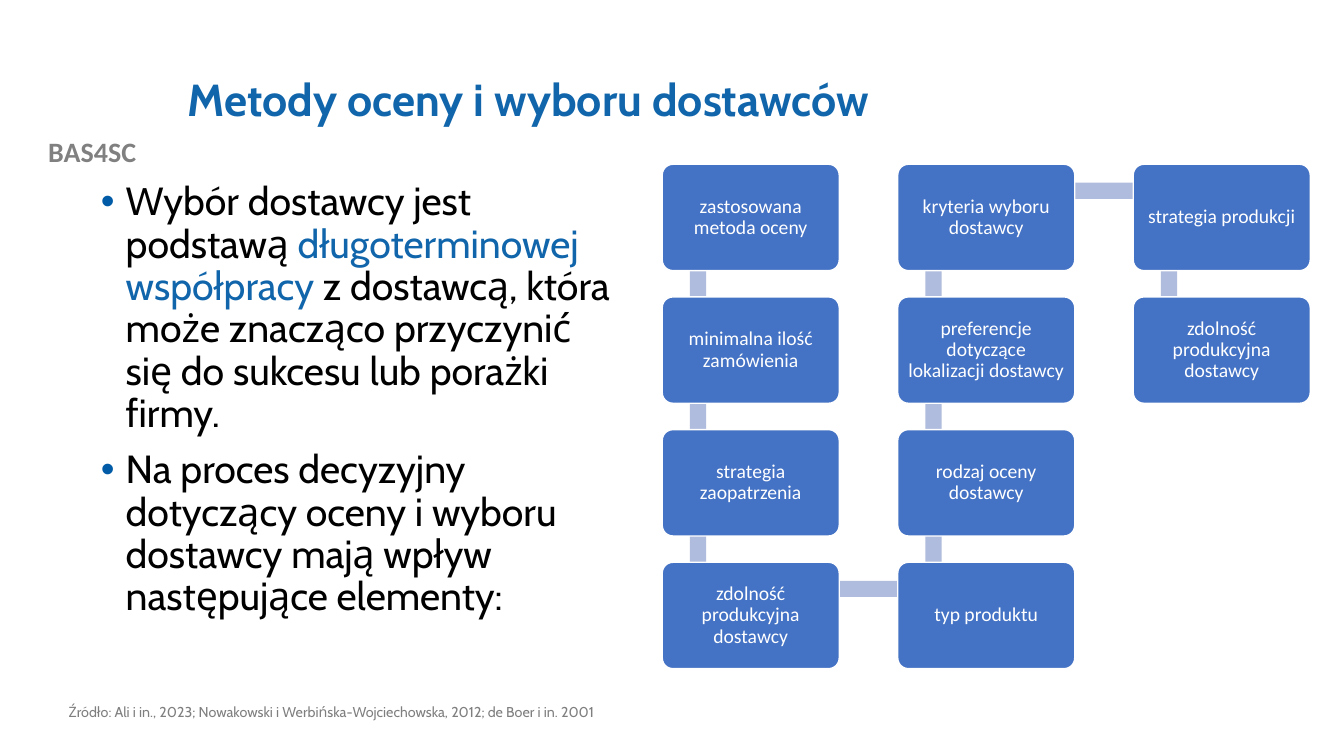
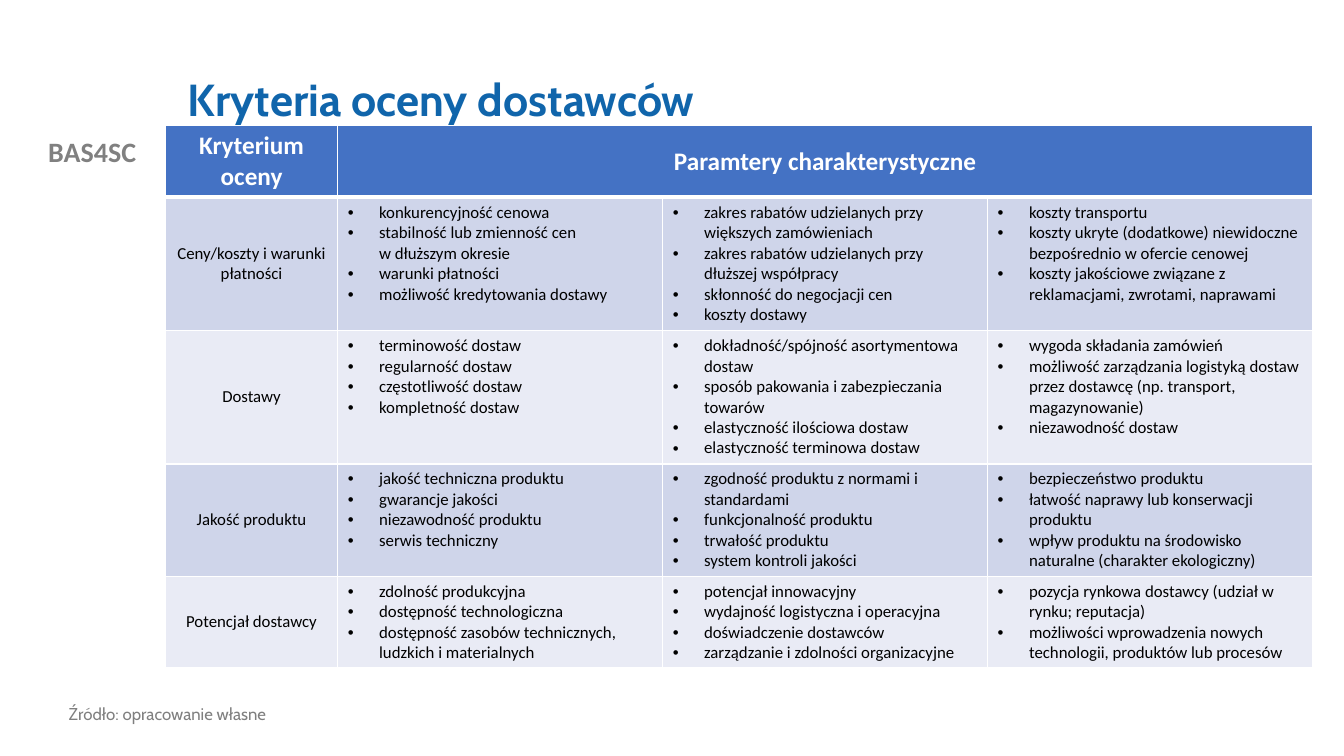
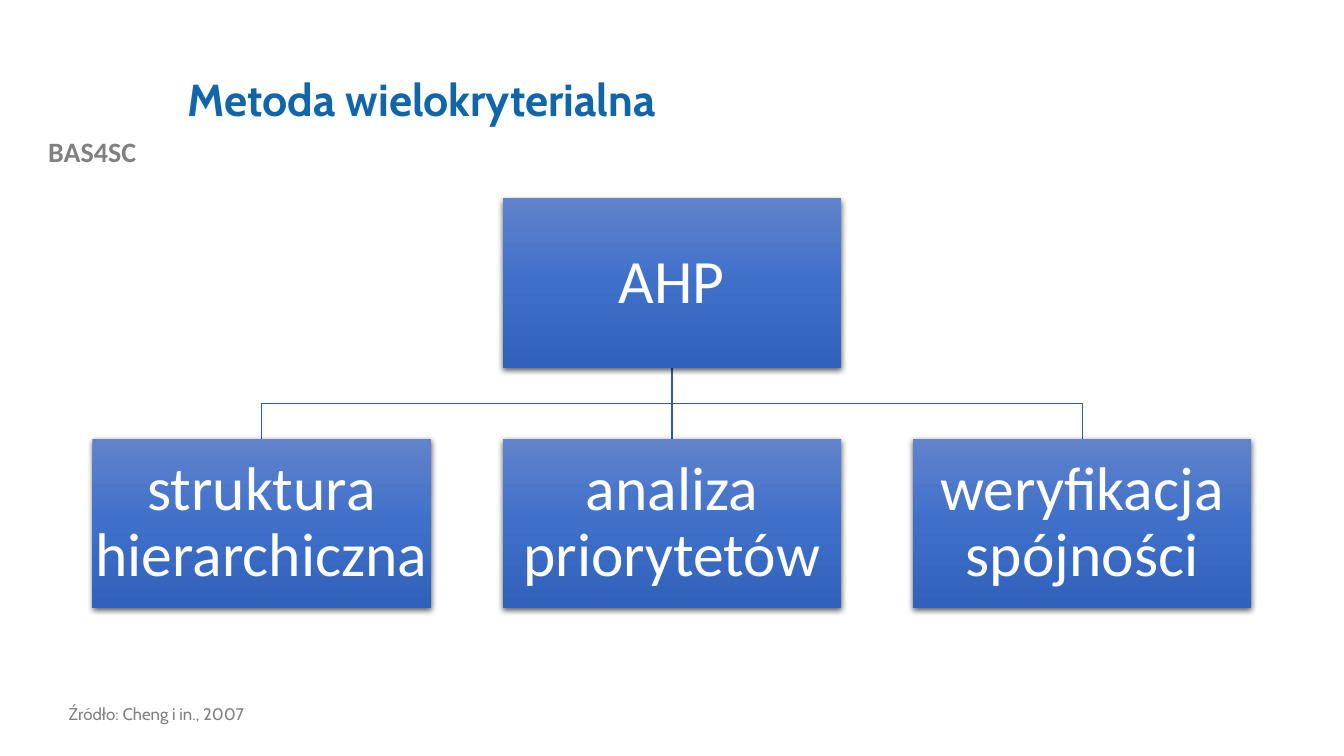
from copy import deepcopy
from dataclasses import dataclass

from lxml import etree
from pptx import Presentation
from pptx.dml.color import RGBColor
from pptx.enum.shapes import MSO_CONNECTOR, MSO_SHAPE
from pptx.enum.text import MSO_ANCHOR, MSO_AUTO_SIZE, PP_ALIGN
from pptx.oxml.ns import qn
from pptx.util import Cm, Pt

LEFT, CENTER = PP_ALIGN.LEFT, PP_ALIGN.CENTER
MIDDLE, TOP = MSO_ANCHOR.MIDDLE, MSO_ANCHOR.TOP
RECT, ROUNDED = MSO_SHAPE.RECTANGLE, MSO_SHAPE.ROUNDED_RECTANGLE
STRAIGHT = MSO_CONNECTOR.STRAIGHT
NO_AUTOFIT = MSO_AUTO_SIZE.NONE
TITLE_ONLY = 5


@dataclass(frozen=True)
class Theme:
    heading_font: str = "Cabin"
    label_font: str = "Calibri"
    accent: str = "1065AB"
    bullet: str = "015BA6"
    ink: str = "000000"
    paper: str = "FFFFFF"
    tag: str = "808080"
    source: str = "7F7F7F"
    block: str = "4472C4"
    link: str = "B0BCDE"
    branch: str = "365B9D"
    bands: tuple = ("CFD5EA", "E9EBF5")
    gradient: tuple = ((0, "6183CB"), (0.5, "3E70CA"), (1, "3062BB"))
    title_size: float = 32
    tag_size: float = 20
    body_size: float = 28
    source_size: float = 12
    long_source_size: float = 10.2
    step_size: float = 14
    header_size: float = 18
    cell_size: float = 12
    node_size: float = 44


@dataclass(frozen=True)
class Box:
    """A region of the slide in centimetres."""
    left: float
    top: float
    width: float
    height: float

    def lengths(self):
        return Cm(self.left), Cm(self.top), Cm(self.width), Cm(self.height)


THEME = Theme()
TITLE_BOX = Box(4.47, 1.02, 27.08, 3.1)
TAG_BOX = Box(0, 3.27, 4.65, 1.12)
SOURCE_BOX = Box(1.48, 17.67, 14.99, 0.89)
BODY_BOX = Box(2.29, 4.46, 13.39, 12.09)
CHAIN_BOX = Box(16.69, 4.14, 16.33, 12.71)
TABLE_BOX = Box(4.17, 3.17, 28.91, 13.65)
TREE_BOX = Box(2.33, 5, 29.21, 10.33)

INTRO = [
    [("Wybór dostawcy jest podstawą ", THEME.ink),
     ("długoterminowej współpracy ", THEME.accent),
     ("z dostawcą, która może znacząco przyczynić się do sukcesu lub porażki firmy.", THEME.ink)],
    [("Na proces decyzyjny dotyczący oceny i wyboru dostawcy mają wpływ "
      "następujące elementy:", THEME.ink)],
]
DECISION_STEPS = [
    "zastosowana metoda oceny", "minimalna ilość zamówienia",
    "strategia zaopatrzenia", "zdolność produkcyjna dostawcy",
    "typ produktu", "rodzaj oceny dostawcy",
    "preferencje dotyczące lokalizacji dostawcy", "kryteria wyboru dostawcy",
    "strategia produkcji", "zdolność produkcyjna dostawcy",
]
CRITERIA_HEADER = ("Kryterium oceny", "Paramtery charakterystyczne")
CRITERIA = [
    ("Ceny/koszty i warunki płatności",
     ["konkurencyjność cenowa", "stabilność lub zmienność cen \nw dłuższym okresie",
      "warunki płatności", "możliwość kredytowania dostawy"],
     ["zakres rabatów udzielanych przy większych zamówieniach",
      "zakres rabatów udzielanych przy dłuższej współpracy",
      "skłonność do negocjacji cen", "koszty dostawy"],
     ["koszty transportu",
      "koszty ukryte (dodatkowe) niewidoczne bezpośrednio w ofercie cenowej",
      "koszty jakościowe związane z reklamacjami, zwrotami, naprawami"]),
    ("Dostawy",
     ["terminowość dostaw", "regularność dostaw", "częstotliwość dostaw",
      "kompletność dostaw"],
     ["dokładność/spójność asortymentowa dostaw",
      "sposób pakowania i zabezpieczania towarów",
      "elastyczność ilościowa dostaw", "elastyczność terminowa dostaw"],
     ["wygoda składania zamówień",
      "możliwość zarządzania logistyką dostaw przez dostawcę (np. transport, magazynowanie)",
      "niezawodność dostaw"]),
    ("Jakość produktu",
     ["jakość techniczna produktu", "gwarancje jakości", "niezawodność produktu",
      "serwis techniczny"],
     ["zgodność produktu z normami i standardami", "funkcjonalność produktu",
      "trwałość produktu", "system kontroli jakości"],
     ["bezpieczeństwo produktu", "łatwość naprawy lub konserwacji produktu",
      "wpływ produktu na środowisko naturalne (charakter ekologiczny)"]),
    ("Potencjał dostawcy",
     ["zdolność produkcyjna", "dostępność technologiczna",
      "dostępność zasobów technicznych, ludzkich i materialnych"],
     ["potencjał innowacyjny", "wydajność logistyczna i operacyjna",
      "doświadczenie dostawców", "zarządzanie i zdolności organizacyjne"],
     ["pozycja rynkowa dostawcy (udział w rynku; reputacja)",
      "możliwości wprowadzenia nowych technologii, produktów lub procesów"]),
]
METHOD_PARTS = ["struktura hierarchiczna", "analiza priorytetów", "weryfikacja spójności"]


def rgb(color):
    return RGBColor.from_string(color)


def add_text(paragraph, text, font, size, color, bold=False):
    """Add a run for each line of the text, with line breaks between them."""
    for number, line in enumerate(text.split("\n")):
        if number:
            paragraph.add_line_break()
        run = paragraph.add_run()
        run.text = line
        run.font.name, run.font.size, run.font.bold = font, Pt(size), bold
        run.font.color.rgb = rgb(color)


def add_bullet(paragraph, indent, color):
    properties = paragraph._p.get_or_add_pPr()
    properties.set("marL", str(Cm(indent)))
    properties.set("indent", str(-Cm(indent)))
    bullet_color = etree.SubElement(properties, qn("a:buClr"))
    etree.SubElement(bullet_color, qn("a:srgbClr"), val=color)
    etree.SubElement(properties, qn("a:buFont"), typeface="Arial")
    etree.SubElement(properties, qn("a:buChar"), char="•")


def paragraphs(frame, items):
    """Pair each item with a paragraph of the frame, reusing the first one."""
    for number, item in enumerate(items):
        yield (frame.add_paragraph() if number else frame.paragraphs[0]), item


def add_text_box(slide, box):
    text_box = slide.shapes.add_textbox(*box.lengths())
    text_box.text_frame.word_wrap = True
    return text_box


def add_plain_shape(slide, kind, box, fill=None):
    shape = slide.shapes.add_shape(kind, *box.lengths())
    shape.shadow.inherit = False
    shape.line.fill.background()
    if fill:
        shape.fill.solid()
        shape.fill.fore_color.rgb = rgb(fill)
    return shape


def add_label(shape, text, size, margin):
    frame = shape.text_frame
    frame.word_wrap, frame.vertical_anchor = True, MIDDLE
    frame.margin_left = frame.margin_right = Cm(margin)
    frame.margin_top = frame.margin_bottom = Cm(margin)
    label = frame.paragraphs[0]
    label.alignment, label.line_spacing = CENTER, 0.9
    add_text(label, text, THEME.label_font, size, THEME.paper)


def add_project_tag(slide):
    """Put the project tag on the slide's layout, so that all slides show it."""
    tag = add_text_box(slide, TAG_BOX)
    paragraph = tag.text_frame.paragraphs[0]
    paragraph.alignment = CENTER
    add_text(paragraph, "BAS4SC", THEME.label_font, THEME.tag_size, THEME.tag, bold=True)
    slide.slide_layout.shapes._spTree.append(tag._element)


def add_slide(deck, title, source, source_size=THEME.source_size, source_spacing=0.9):
    slide = deck.slides.add_slide(deck.slide_layouts[TITLE_ONLY])
    heading = slide.shapes.title
    heading.left, heading.top, heading.width, heading.height = TITLE_BOX.lengths()
    heading.text_frame.vertical_anchor = MIDDLE
    heading.text_frame.auto_size = NO_AUTOFIT
    paragraph = heading.text_frame.paragraphs[0]
    paragraph.alignment, paragraph.line_spacing = LEFT, 0.9
    add_text(paragraph, title, THEME.heading_font, THEME.title_size, THEME.accent, bold=True)

    paragraph = add_text_box(slide, SOURCE_BOX).text_frame.paragraphs[0]
    paragraph.line_spacing = source_spacing
    add_text(paragraph, source, THEME.heading_font, source_size, THEME.source)
    return slide


def add_intro(slide, box):
    frame = add_text_box(slide, box).text_frame
    for number, (paragraph, phrases) in enumerate(paragraphs(frame, INTRO)):
        add_bullet(paragraph, 0.63, THEME.bullet)
        paragraph.line_spacing = 0.9
        if number:
            paragraph.space_before = Pt(10)
        for text, color in phrases:
            add_text(paragraph, text, THEME.heading_font, THEME.body_size, color)


def add_step_chain(slide, box, steps, rows=4, columns=3):
    """Place the steps in columns that run down and up in turn, joined by bars."""
    step_width, step_height, bar = 4.46, 2.68, 0.41
    column_pitch = (box.width - step_width) / (columns - 1)
    row_pitch = (box.height - step_height) / (rows - 1)
    places = []
    for number in range(len(steps)):
        column, row = divmod(number, rows)
        if column % 2:
            row = rows - 1 - row
        places.append((box.left + column * column_pitch, box.top + row * row_pitch))

    joint_x, joint_y = 0.9, 0.67
    for (x1, y1), (x2, y2) in zip(places, places[1:]):
        left, top = min(x1, x2) + joint_x, min(y1, y2) + joint_y
        if abs(x1 - x2) < bar:
            bar_box = Box(left - bar / 2, top, bar, row_pitch)
        else:
            bar_box = Box(left, top - bar / 2, column_pitch, bar)
        add_plain_shape(slide, RECT, bar_box, THEME.link)

    for text, (left, top) in zip(steps, places):
        step = add_plain_shape(slide, ROUNDED, Box(left, top, step_width, step_height),
                               THEME.block)
        step.adjustments[0] = 0.1
        step.line.color.rgb, step.line.width = rgb(THEME.paper), Pt(1)
        add_label(step, text, THEME.step_size, 0.16)


def style_cell(cell, fill, top=1, bottom=1, anchor=MIDDLE):
    """Set the white borders, whose widths are in points, and the fill."""
    properties = cell._tc.get_or_add_tcPr()
    for side, width in (("L", 1), ("R", 1), ("T", top), ("B", bottom)):
        border = etree.SubElement(properties, qn(f"a:ln{side}"), w=str(Pt(width)))
        solid = etree.SubElement(border, qn("a:solidFill"))
        etree.SubElement(solid, qn("a:srgbClr"), val=THEME.paper)
    cell.fill.solid()
    cell.fill.fore_color.rgb = rgb(fill)
    cell.vertical_anchor = anchor


def add_centred_cell_text(cell, text, size, color, bold=False):
    paragraph = cell.text_frame.paragraphs[0]
    paragraph.alignment = CENTER
    add_text(paragraph, text, THEME.label_font, size, color, bold)


def add_criteria_table(slide, box):
    columns = len(CRITERIA[0])
    table = slide.shapes.add_table(len(CRITERIA) + 1, columns, *box.lengths()).table
    name_width = 4.34
    for number, column in enumerate(table.columns):
        column.width = Cm((box.width - name_width) / (columns - 1) if number else name_width)
    for row, height in zip(table.rows, (1.8, 3.36, 3.36, 2.83, 2.3)):
        row.height = Cm(height)

    for column in range(columns):
        style_cell(table.cell(0, column), THEME.block, bottom=3)
    table.cell(0, 1).merge(table.cell(0, columns - 1))
    for column, text in enumerate(CRITERIA_HEADER):
        add_centred_cell_text(table.cell(0, column), text, THEME.header_size,
                              THEME.paper, bold=True)

    for row, (criterion, *parameter_lists) in enumerate(CRITERIA, start=1):
        band = THEME.bands[(row - 1) % 2]
        top = 3 if row == 1 else 1
        name = table.cell(row, 0)
        style_cell(name, band, top)
        add_centred_cell_text(name, criterion, THEME.cell_size, THEME.ink)
        for column, parameters in enumerate(parameter_lists, start=1):
            cell = table.cell(row, column)
            style_cell(cell, band, top, anchor=TOP)
            for paragraph, text in paragraphs(cell.text_frame, parameters):
                add_bullet(paragraph, 0.79, THEME.ink)
                add_text(paragraph, text, THEME.label_font, THEME.cell_size, THEME.ink)


def add_branch(slide, x1, y1, x2, y2):
    """Join two points with a straight line, or with one that bends halfway down."""
    start, end = (Cm(x1), Cm(y1)), (Cm(x2), Cm(y2))
    if abs(x1 - x2) < 0.01:
        branch = slide.shapes.add_connector(STRAIGHT, *start, *end)
        etree.SubElement(branch._element.spPr, qn("a:effectLst"))
    else:
        bend = Cm((y1 + y2) / 2)
        outline = slide.shapes.build_freeform(*start)
        outline.add_line_segments([(start[0], bend), (end[0], bend), end], close=False)
        branch = outline.convert_to_shape()
        branch.fill.background()
        branch.shadow.inherit = False
    branch.line.color.rgb, branch.line.width = rgb(THEME.branch), Pt(1)


def add_node(slide, box, text):
    """Add a tree node with a three-stop gradient and a soft shadow."""
    node = add_plain_shape(slide, RECT, box)
    node.fill.gradient()
    node.fill.gradient_angle = 270
    stop_list = node._element.spPr.find(qn("a:gradFill")).find(qn("a:gsLst"))
    stop_list.insert(1, deepcopy(stop_list[0]))
    for stop, (position, color) in zip(node.fill.gradient_stops, THEME.gradient):
        stop.position = position
        stop.color.rgb = rgb(color)
    effects = node._element.spPr.find(qn("a:effectLst"))
    shadow = etree.SubElement(effects, qn("a:outerShdw"), blurRad=str(Pt(4.5)),
                              dist=str(Pt(1.5)), dir="5400000", algn="ctr", rotWithShape="0")
    color = etree.SubElement(shadow, qn("a:srgbClr"), val=THEME.ink)
    etree.SubElement(color, qn("a:alpha"), val="63000")
    add_label(node, text, THEME.node_size, 0.06)


def add_method_tree(slide, box, root, parts):
    node_width, node_height = 8.53, 4.27
    pitch = (box.width - node_width) / (len(parts) - 1)
    lefts = [box.left + number * pitch for number in range(len(parts))]
    root_centre = box.left + box.width / 2
    root_bottom = box.top + node_height
    parts_top = box.top + box.height - node_height

    for left in lefts:
        add_branch(slide, root_centre, root_bottom, left + node_width / 2, parts_top)
    add_node(slide, Box(root_centre - node_width / 2, box.top, node_width, node_height), root)
    for left, text in zip(lefts, parts):
        add_node(slide, Box(left, parts_top, node_width, node_height), text)


def main():
    deck = Presentation()
    deck.slide_width, deck.slide_height = Cm(33.87), Cm(19.05)

    methods = add_slide(
        deck, "Metody oceny i wyboru dostawców",
        "Źródło: Ali i in., 2023; Nowakowski i Werbińska-Wojciechowska, 2012; de Boer i in. 2001",
        THEME.long_source_size, 0.8)
    add_project_tag(methods)
    add_intro(methods, BODY_BOX)
    add_step_chain(methods, CHAIN_BOX, DECISION_STEPS)

    criteria = add_slide(deck, "Kryteria oceny dostawców", "Źródło: opracowanie własne")
    add_criteria_table(criteria, TABLE_BOX)

    multicriteria = add_slide(deck, "Metoda wielokryterialna", "Źródło: Cheng i in., 2007")
    add_method_tree(multicriteria, TREE_BOX, "AHP", METHOD_PARTS)

    deck.save("out.pptx")


if __name__ == "__main__":
    main()
